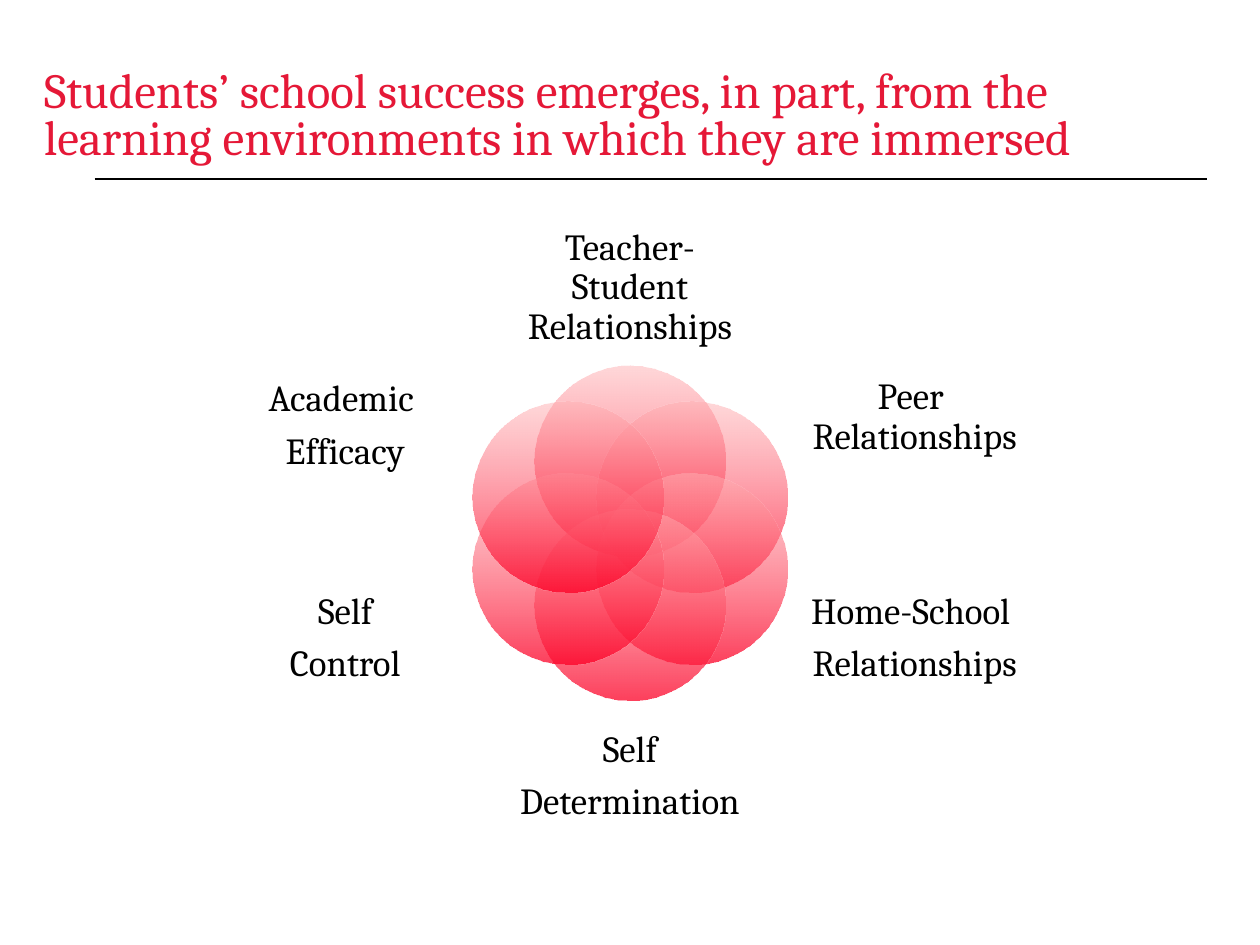
"""Builds a slide with six overlapping circles and their labels."""
from math import cos, radians, sin
from lxml.etree import SubElement as Sub
from pptx import Presentation
from pptx.dml.color import RGBColor as Rgb
from pptx.enum.shapes import MSO_CONNECTOR as Link, MSO_SHAPE as Form
from pptx.enum.text import MSO_ANCHOR as Anchor, MSO_AUTO_SIZE as Fit, PP_ALIGN as Align
from pptx.oxml.ns import qn
from pptx.util import Inches, Pt

HUES = {"title": "E51837", "ink": "000000", "deep": "FD0026", "pale": "FFB0B3"}
FONT = "Cambria"

deck = Presentation()
deck.slide_width, deck.slide_height = Inches(10), Inches(7.5)
col, row = deck.slide_width / 100, deck.slide_height / 75
slide = deck.slides.add_slide(deck.slide_layouts[5])


def area(x, y, w, h):
    return int(x * col), int(y * row), int(w * col), int(h * row)


def style(para, size, hue, gap):
    para.line_spacing = gap
    for run in para.runs:
        run.font.name, run.font.size = FONT, Pt(size)
        run.font.color.rgb = Rgb.from_string(HUES[hue])


title = slide.shapes.title
title.left, title.top, title.width, title.height = area(2.5, 4.2, 92.5, 9.4)
frame = title.text_frame
frame.text = "Students’ school success emerges, in part, from the learning environments in which they are immersed"
frame.auto_size, frame.vertical_anchor = Fit.NONE, Anchor.BOTTOM
frame.paragraphs[0].alignment = Align.LEFT
style(frame.paragraphs[0], 28, "title", 0.8)

left, top, wide, _ = area(7.5, 14.2, 88.3, 0)
rule = slide.shapes.add_connector(Link.STRAIGHT, left, top, left + wide, top)
rule.line.color.rgb = Rgb.from_string(HUES["ink"])
rule.line.width = Pt(0.75)
Sub(rule.element.spPr, qn("a:effectLst"))

labels = [
    ("Teacher-Student Relationships", 40.5, 17.7, 19, 10.3),
    ("Peer \vRelationships", 63.6, 27.5, 18, 11.3),
    ("Home-School \nRelationships", 63.6, 44.4, 18, 12.6),
    ("Self\nDetermination", 40.5, 56.5, 19, 10.3),
    ("Self\nControl", 18.4, 44.4, 18, 12.6),
    ("Academic \nEfficacy", 18.4, 27.5, 18, 12.6),
]
size, orbit, mid_x, mid_y = 15.2, 5.7, 50, 42.3
group = slide.shapes.add_group_shape()

for turn, (text, *box) in enumerate(labels):
    angle = radians(turn * 360 / len(labels))
    x = mid_x + orbit * sin(angle) - size / 2
    y = mid_y - orbit * cos(angle) - size / 2
    disc = group.shapes.add_shape(Form.OVAL, *area(x, y, size, size))
    disc.shadow.inherit = False
    disc.line.fill.background()
    disc.fill.gradient()
    disc.fill.gradient_angle = 90
    for stop, hue, pos in zip(disc.fill.gradient_stops, ("deep", "pale"), (0, 1)):
        stop.color.rgb = Rgb.from_string(HUES[hue])
        stop.position = pos
    for tint, alpha in zip(disc.element.spPr.iter(qn("a:srgbClr")), (75, 50)):
        Sub(tint, qn("a:alpha"), val=str(alpha * 1000))

    label = group.shapes.add_textbox(*area(*box))
    frame = label.text_frame
    frame.text = text
    frame.word_wrap, frame.vertical_anchor = True, Anchor.MIDDLE
    frame.margin_left = frame.margin_right = frame.margin_top = frame.margin_bottom = 0
    for para in frame.paragraphs:
        para.alignment = Align.CENTER
        para.space_after = Pt(7.35)
        style(para, 21, "ink", 0.9)

deck.save("out.pptx")
